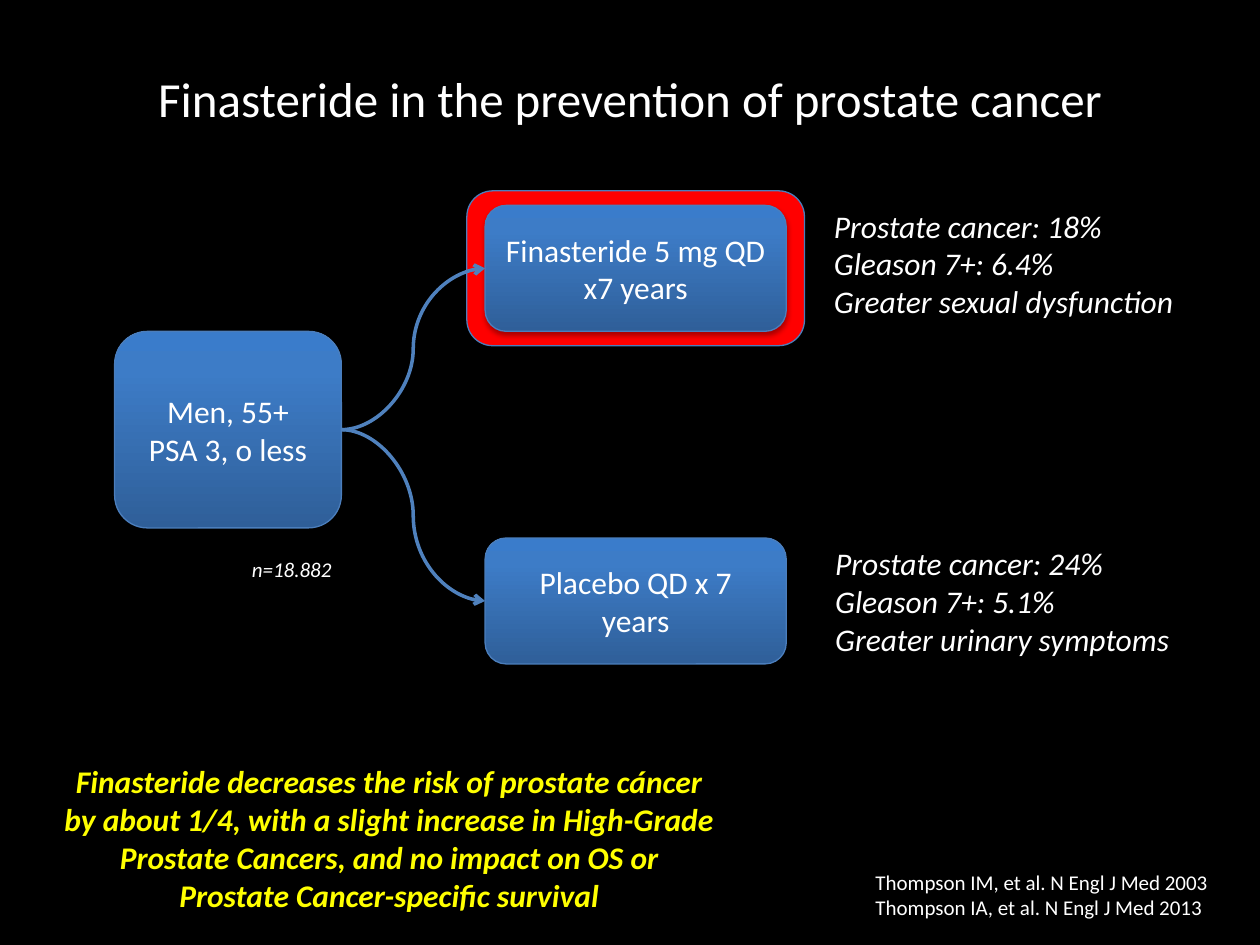
from pptx import Presentation
from pptx.dml.color import RGBColor
from pptx.enum.shapes import MSO_CONNECTOR as Connector, MSO_SHAPE as Shape
from pptx.enum.text import MSO_ANCHOR as Anchor, MSO_AUTO_SIZE as AutoSize, PP_ALIGN as Align
from pptx.oxml import parse_xml
from pptx.oxml.ns import nsdecls
from pptx.util import Inches, Pt

# Content
TITLE = "Finasteride in the prevention of prostate cancer"
POPULATION = ["Men, 55+", "PSA 3, o less"]
SAMPLE = ["n=18.882"]
ARMS = [
    {"name": "Finasteride 5 mg QD x7 years", "top": 21.73, "highlight": True,
     "results": ["Prostate cancer: 18%", "Gleason 7+: 6.4%", "Greater sexual dysfunction"],
     "results_box": (65.2, 21.2, 29.9, 13.47)},
    {"name": "Placebo QD x 7 years", "top": 56.93, "highlight": False,
     "results": ["Prostate cancer: 24%", "Gleason 7+: 5.1%", "Greater urinary symptoms"],
     "results_box": (65.3, 56.93, 29.5, 13.47)},
]
CONCLUSION = ["Finasteride decreases the risk of prostate cáncer by about 1/4, "
              "with a slight increase in High-Grade Prostate Cancers, and no impact "
              "on OS or Prostate Cancer-specific survival"]
CITATIONS = ["Thompson IM, et al. N Engl J Med 2003", "Thompson IA, et al. N Engl J Med 2013"]

# Places: left, top, width, height in percent of the slide
WIDTH, HEIGHT = Inches(10), Inches(7.5)
TITLE_BOX = (5, 4, 90, 12.67)
POPULATION_BOX = (9.1, 35.07, 18, 20.8)
SAMPLE_BOX = (19, 58.27, 8.8, 4)
ARM_LEFT, ARM_WIDTH, ARM_HEIGHT = 38.5, 23.9, 13.33
HALO_X, HALO_Y = 1.45, 1.53
CONCLUSION_BOX = (4.1, 80, 53.6, 17.47)
CITATION_BOX = (68.5, 91.33, 28.7, 6.67)

THEME = {
    "font": "Calibri", "title": 28, "body": 18, "small": 12,
    "back": "000000", "text": "FFFFFF", "accent": "FFFF00", "halo": "FF0000",
    "outline": "4B7EBC", "arrow": "4F81BD",
    "gradient": [(0, "2F5F99"), (80, "3D7CC7"), (100, "3A7CCB")],
}


def color(name):
    return RGBColor.from_string(THEME[name])


def place(box):
    left, top, width, height = box
    return [round(share * size / 100) for share, size in
            ((left, WIDTH), (top, HEIGHT), (width, WIDTH), (height, HEIGHT))]


def write(shape, lines, size="body", ink="text", align=Align.LEFT, anchor=Anchor.TOP,
          wrap=True, bold=False, italic=False):
    frame = shape.text_frame
    frame.text = "\n".join(lines)
    frame.word_wrap, frame.vertical_anchor = wrap, anchor
    for para in frame.paragraphs:
        para.alignment = align
        for span in para.runs:
            font = span.font
            font.name, font.size = THEME["font"], Pt(THEME[size])
            font.bold, font.italic = bold, italic
            font.color.rgb = color(ink)


def add_text(page, box, lines, **style):
    shape = page.shapes.add_textbox(*place(box))
    write(shape, lines, **style)
    shape.text_frame.auto_size = AutoSize.SHAPE_TO_FIT_TEXT


def add_panel(page, box):
    """Rounded rectangle with a thin outline and a soft shadow below it."""
    panel = page.shapes.add_shape(Shape.ROUNDED_RECTANGLE, *place(box))
    panel.line.color.rgb, panel.line.width = color("outline"), Pt(0.75)
    panel.shadow.inherit = False
    effects = panel.element.spPr.find("{*}effectLst")
    effects.append(parse_xml(
        f'<a:outerShdw {nsdecls("a")} blurRad="{Pt(3.1)}" dist="{Pt(1.8)}" dir="5400000" '
        'rotWithShape="0"><a:srgbClr val="000000"><a:alpha val="35000"/></a:srgbClr>'
        '</a:outerShdw>'))
    return panel


def add_node(page, box, lines):
    node = add_panel(page, box)
    node.fill.background()
    stops = "".join(f'<a:gs pos="{share * 1000}"><a:srgbClr val="{tone}"/></a:gs>'
                    for share, tone in THEME["gradient"])
    properties = node.element.spPr
    properties.replace(properties.find("{*}noFill"), parse_xml(
        f'<a:gradFill {nsdecls("a")} rotWithShape="1"><a:gsLst>{stops}</a:gsLst>'
        '<a:lin ang="16200000" scaled="0"/></a:gradFill>'))
    write(node, lines, align=Align.CENTER, anchor=Anchor.MIDDLE)
    return node


def add_arrow(page, source, target):
    arrow = page.shapes.add_connector(Connector.CURVE, 0, 0, 0, 0)
    arrow.begin_connect(source, 3)  # right side
    arrow.end_connect(target, 1)  # left side
    arrow.line.color.rgb, arrow.line.width = color("arrow"), Pt(2)
    properties = arrow.element.spPr
    properties.find("{*}ln").append(parse_xml(f'<a:tailEnd {nsdecls("a")} type="arrow"/>'))
    properties.append(parse_xml(f'<a:effectLst {nsdecls("a")}/>'))


def main():
    deck = Presentation()
    deck.slide_width, deck.slide_height = WIDTH, HEIGHT
    page = deck.slides.add_slide(deck.slide_layouts[6])
    page.background.fill.solid()
    page.background.fill.fore_color.rgb = color("back")

    # Title
    title = page.shapes.add_textbox(*place(TITLE_BOX))
    write(title, [TITLE], size="title", align=Align.CENTER, anchor=Anchor.MIDDLE)

    # Study population
    population = add_node(page, POPULATION_BOX, POPULATION)
    add_text(page, SAMPLE_BOX, SAMPLE, size="small", wrap=False, italic=True)

    # Treatment arms with their results
    for arm in ARMS:
        if arm["highlight"]:
            halo = add_panel(page, (ARM_LEFT - HALO_X, arm["top"] - HALO_Y,
                                    ARM_WIDTH + 2 * HALO_X, ARM_HEIGHT + 2 * HALO_Y))
            halo.fill.solid()
            halo.fill.fore_color.rgb = color("halo")
        node = add_node(page, (ARM_LEFT, arm["top"], ARM_WIDTH, ARM_HEIGHT), [arm["name"]])
        add_arrow(page, population, node)
        add_text(page, arm["results_box"], arm["results"], wrap=False, italic=True)

    # Conclusion and citations
    add_text(page, CONCLUSION_BOX, CONCLUSION, ink="accent", align=Align.CENTER,
             bold=True, italic=True)
    add_text(page, CITATION_BOX, CITATIONS, size="small")

    deck.save("out.pptx")


if __name__ == "__main__":
    main()
